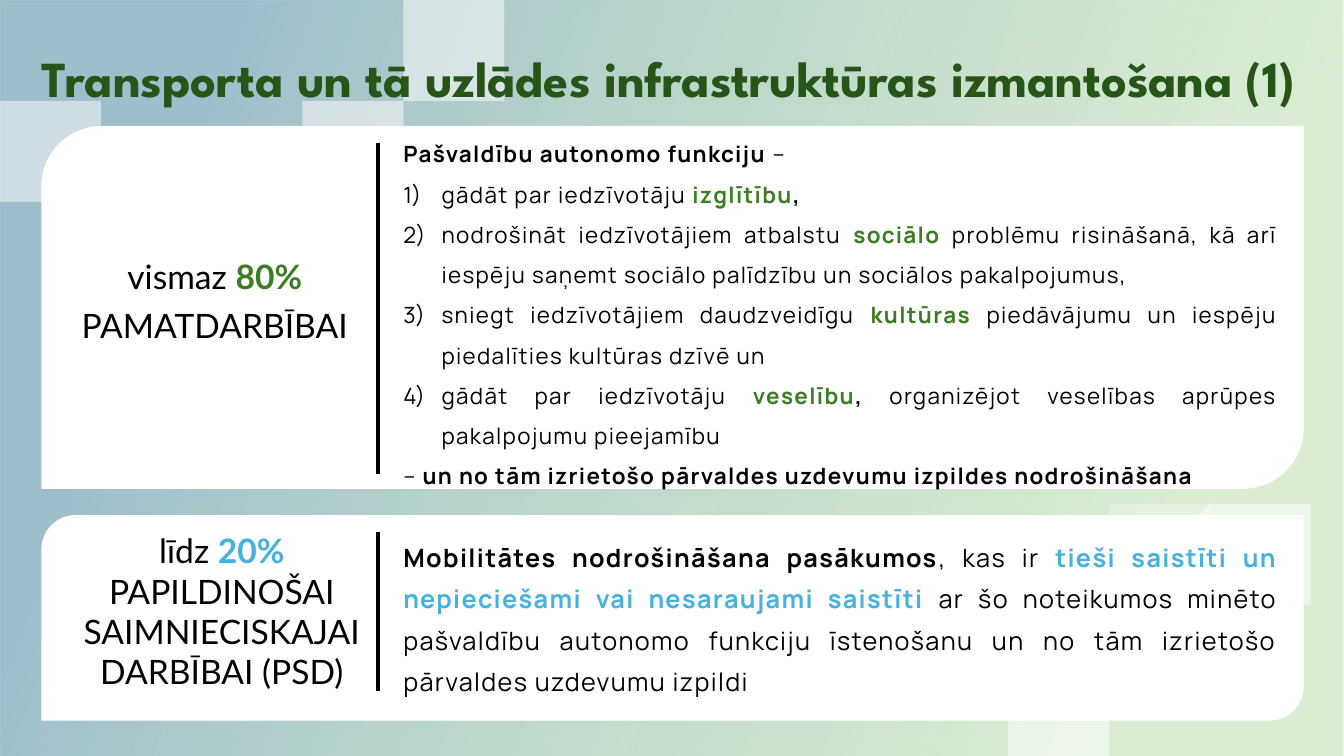
from math import cos, pi, sin

from lxml import etree
from pptx import Presentation
from pptx.dml.color import RGBColor
from pptx.enum.shapes import MSO_CONNECTOR, MSO_SHAPE
from pptx.enum.text import MSO_ANCHOR, MSO_AUTO_SIZE, PP_ALIGN
from pptx.oxml.ns import qn
from pptx.util import Inches, Pt

RECT, CARD = MSO_SHAPE.RECTANGLE, MSO_SHAPE.ROUND_2_DIAG_RECTANGLE
STRAIGHT = MSO_CONNECTOR.STRAIGHT
TOP, GROW = MSO_ANCHOR.TOP, MSO_AUTO_SIZE.SHAPE_TO_FIT_TEXT
LEFT, CENTER, JUSTIFY = PP_ALIGN.LEFT, PP_ALIGN.CENTER, PP_ALIGN.JUSTIFY

WHITE = RGBColor(0xFF, 0xFF, 0xFF)
BLACK = RGBColor(0, 0, 0)
DARK_GREEN = RGBColor(0x27, 0x54, 0x17)
GREEN = RGBColor(0x3B, 0x7D, 0x23)
SKY = RGBColor(0x46, 0xB1, 0xE1)
BACK_GREEN = RGBColor(0x4E, 0xA7, 0x2E)
BACK_BLUE = RGBColor(0x15, 0x60, 0x82)

# Guide curves in inches; each ribbon edge is (shift at start, shift at end)
LEFT_GUIDE = [(5.21, 0), (4.95, 0.69), (4.45, 1.26), (3.37, 2.12), (1.87, 2.44),
              (0.93, 2.27), (0, 1.79)]
LEFT_RIBBONS = [((-0.06, -0.32), (-0.02, 0.06)), ((0, -0.1), (0.2, 0.42)),
                ((0, 0), (0.6, 0.6)), ((0, 0), (0.73, 0.73))]
RIGHT_GUIDE = [(9.94, 7.5), (10.52, 6.4), (11.26, 5.69), (12.19, 5.16), (13.33, 4.84)]
RIGHT_RIBBONS = [((-0.03, -0.31), (0.03, 0)), ((0, 0), (0.8, 0.75)),
                 ((0, -0.04), (0.23, 0.29)), ((0, 0), (0.68, 0.62))]

# Paragraphs are lists of runs: text, colour, bold
FUNCTIONS = [
    [("Pašvaldību autonomo funkciju ", BLACK, True), ("– ", BLACK, False)],
    [("gādāt par iedzīvotāju ", BLACK, False), ("izglītību", GREEN, True), (", ", BLACK, True)],
    [("nodrošināt iedzīvotājiem atbalstu ", BLACK, False), ("sociālo ", GREEN, True),
     ("problēmu risināšanā, kā arī iespēju saņemt sociālo palīdzību un sociālos pakalpojumus, ",
      BLACK, False)],
    [("sniegt iedzīvotājiem daudzveidīgu ", BLACK, False), ("kultūras ", GREEN, True),
     ("piedāvājumu un iespēju piedalīties kultūras dzīvē un ", BLACK, False)],
    [("gādāt par iedzīvotāju ", BLACK, False), ("veselību", GREEN, True), (", ", BLACK, True),
     ("organizējot veselības aprūpes pakalpojumu pieejamību ", BLACK, False)],
    [("– ", BLACK, False),
     ("un no tām izrietošo pārvaldes uzdevumu izpildes nodrošināšana", BLACK, True)],
]
MOBILITY = [
    [("Mobilitātes nodrošināšana pasākumos", BLACK, True), (", kas ir ", BLACK, False),
     ("tieši saistīti un nepieciešami vai nesaraujami saistīti ", SKY, True),
     ("ar šo noteikumos minēto pašvaldību autonomo funkciju īstenošanu un no tām izrietošo "
      "pārvaldes uzdevumu izpildi", BLACK, False)],
]
CORE_SHARE = [[("vismaz ", BLACK, False), ("80%", GREEN, True)], [("PAMATDARBĪBAI", BLACK, False)]]
EXTRA_SHARE = [
    [("līdz ", BLACK, False), ("20% ", SKY, True),
     ("PAPILDINOŠAI SAIMNIECISKAJAI DARBĪBAI (PSD)", BLACK, False)],
]


def set_alpha(sp, *percents):
    """Give the fill colours of a shape their opacity, in order."""
    for clr, percent in zip(sp._element.spPr.iter(qn("a:srgbClr")), percents):
        etree.SubElement(clr, qn("a:alpha")).set("val", str(percent * 1000))


def smooth(points, steps=8):
    """Catmull-Rom curve through the points."""
    padded = [points[0], *points, points[-1]]
    curve = [points[0]]
    for a, b, c, d in zip(padded, padded[1:], padded[2:], padded[3:]):
        for t in (i / steps for i in range(1, steps + 1)):
            curve.append(tuple(
                (2 * q + (r - p) * t + (2 * p - 5 * q + 4 * r - s) * t ** 2
                 + (3 * q - p - 3 * r + s) * t ** 3) / 2
                for p, q, r, s in zip(a, b, c, d)))
    return curve


def ribbon_edge(guide, shift, side, turn):
    """Shift the guide sideways at its start, turning to up or down at its end."""
    start, end = shift
    points = []
    for i, (x, y) in enumerate(guide):
        t = i / (len(guide) - 1)
        angle = min(1, turn * t) * pi / 2
        distance = side * (start + (end - start) * t)
        points.append((x + distance * cos(angle), y + distance * sin(angle)))
    return smooth(points)


def add_ribbons(slide, guide, ribbons, side, turn):
    for outer, inner in ribbons:
        outline = (ribbon_edge(guide, outer, side, turn)
                   + ribbon_edge(guide, inner, side, turn)[::-1])
        builder = slide.shapes.build_freeform(*outline[0], scale=Inches(1))
        builder.add_line_segments(outline[1:], close=True)
        sp = builder.convert_to_shape()
        style_shape(sp)
        set_alpha(sp, 30)


def style_shape(sp):
    sp.shadow.inherit = False
    sp.line.fill.background()
    sp.fill.solid()
    sp.fill.fore_color.rgb = WHITE


def add_shape(slide, kind, left, top, width, height):
    sp = slide.shapes.add_shape(kind, Inches(left), Inches(top), Inches(width), Inches(height))
    style_shape(sp)
    return sp


def add_backdrop(slide):
    sp = add_shape(slide, RECT, 0, 0, 13.33, 7.5)
    sp.fill.gradient()
    sp.fill.gradient_angle = 160
    for stop, position, color in zip(sp.fill.gradient_stops, (0.16, 0.85), (BACK_GREEN, BACK_BLUE)):
        stop.position = position
        stop.color.rgb = color
    set_alpha(sp, 20, 40)


def add_divider(slide, top, bottom):
    x = Inches(3.75)
    line = slide.shapes.add_connector(STRAIGHT, x, Inches(bottom), x, Inches(top))
    line.line.color.rgb = BLACK
    line.line.width = Pt(3)
    etree.SubElement(line._element.spPr, qn("a:effectLst"))


def fill_text(tf, paragraphs, font, size, align, line_spacing=None, tracking=None, inset=True):
    tf.word_wrap = True
    tf.auto_size = GROW
    tf.vertical_anchor = TOP
    if not inset:
        tf.margin_left = tf.margin_top = tf.margin_right = tf.margin_bottom = 0
    for i, runs in enumerate(paragraphs):
        p = tf.add_paragraph() if i else tf.paragraphs[0]
        p.alignment = align
        if line_spacing:
            p.line_spacing = line_spacing
        for text, color, bold in runs:
            r = p.add_run()
            r.text = text
            r.font.name, r.font.size, r.font.bold = font, Pt(size), bold
            r.font.color.rgb = color
            if tracking:
                r._r.get_or_add_rPr().set("spc", str(tracking * 100))


def add_text(slide, left, top, width, height, *content, **options):
    box = slide.shapes.add_textbox(Inches(left), Inches(top), Inches(width), Inches(height))
    fill_text(box.text_frame, *content, **options)
    return box.text_frame


def number_paragraph(p):
    pPr = p._p.get_or_add_pPr()
    pPr.set("marL", str(Inches(0.38)))
    pPr.set("indent", str(-Inches(0.38)))
    etree.SubElement(pPr, qn("a:buAutoNum")).set("type", "arabicParenR")


def place_title(slide, text):
    title = slide.shapes.title
    title.left, title.top = Inches(0.41), Inches(0.23)
    title.width, title.height = Inches(12.73), Inches(0.76)
    fill_text(title.text_frame, [[(text, DARK_GREEN, True)]], "League Spartan", 36, LEFT,
              line_spacing=Pt(60.2), inset=False)
    slide.shapes._spTree.append(title._element)  # in front of the backdrop


def main():
    prs = Presentation()
    prs.slide_width, prs.slide_height = Inches(13.33), Inches(7.5)
    slide = prs.slides.add_slide(prs.slide_layouts[5])

    # Backdrop and title
    add_backdrop(slide)
    add_ribbons(slide, LEFT_GUIDE, LEFT_RIBBONS, side=-1, turn=1.5)
    add_ribbons(slide, RIGHT_GUIDE, RIGHT_RIBBONS, side=1, turn=1)
    place_title(slide, "Transporta un tā uzlādes infrastruktūras izmantošana (1)")

    # Core activity
    add_shape(slide, CARD, 0.41, 1.25, 12.52, 3.6)
    tf = add_text(slide, 4, 1.26, 8.67, 3.6, FUNCTIONS, "Manrope", 16, JUSTIFY,
                  line_spacing=1.5, tracking=1, inset=False)
    for p in tf.paragraphs[1:-1]:
        number_paragraph(p)
    tf = add_text(slide, 0.46, 2.49, 3.34, 0.99, CORE_SHARE, "Lato", 24, CENTER)
    tf.paragraphs[1].space_before = Pt(6)
    add_divider(slide, 1.42, 4.7)

    # Supplementary economic activity
    add_shape(slide, CARD, 0.41, 5.11, 12.52, 2.04)
    add_text(slide, 4, 5.27, 8.67, 1.59, MOBILITY, "Manrope", 18, JUSTIFY,
             line_spacing=Pt(29.5), tracking=1, inset=False)
    add_text(slide, 0.53, 5.21, 3.34, 1.72, EXTRA_SHARE, "Lato", 24, CENTER)
    add_divider(slide, 5.28, 6.86)

    prs.save("out.pptx")


if __name__ == "__main__":
    main()
